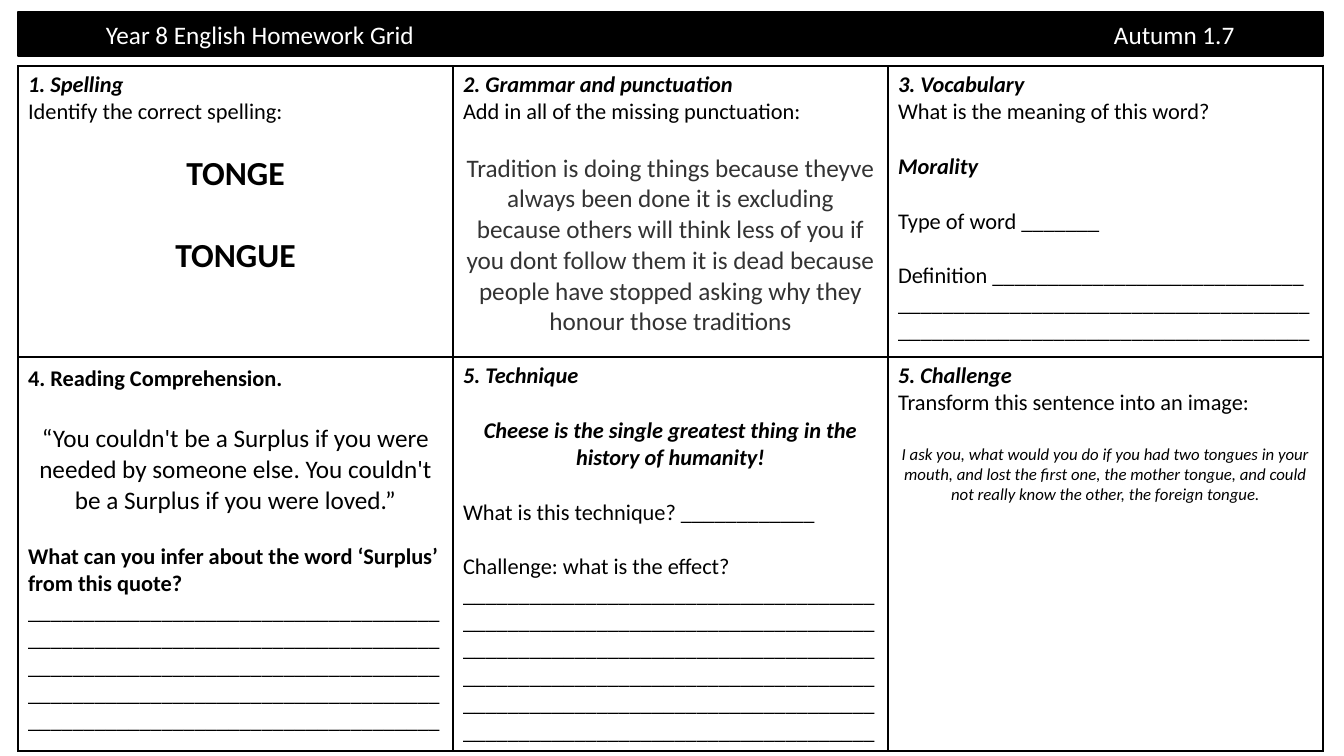
"""Build a one-slide English homework grid with a title bar and six task cells."""
from dataclasses import dataclass

import lxml.etree
import pptx
import pptx.dml.color
import pptx.enum.text
import pptx.oxml.ns
import pptx.util

EMU_PER_PX = 914400 / 100.8
LINE_HEIGHT = 1.22
RULE = "_" * 37
ALIGN = pptx.enum.text.PP_ALIGN


@dataclass(frozen=True)
class Theme:
    font: str = "Calibri"
    black: str = "000000"
    white: str = "FFFFFF"
    grey: str = "333333"
    small: int = 12
    body: int = 16
    large: int = 18
    word: int = 24
    border: int = 1


THEME = Theme()


@dataclass(frozen=True)
class Line:
    text: str
    size: int = THEME.body
    bold: bool = False
    italic: bool = False
    centred: bool = False
    gap: int = 0
    color: str = THEME.black
    height: int = 0


def heading(text: str) -> Line:
    return Line(text, bold=True, italic=True)


def spaced(text: str) -> Line:
    return Line(text, gap=THEME.body)


GRID: list[list[list[Line]]] = [
    [
        [
            heading("1. Spelling"),
            Line("Identify the correct spelling:"),
            Line("TONGE", THEME.word, bold=True, centred=True, gap=THEME.body),
            Line("TONGUE", THEME.word, bold=True, centred=True, gap=THEME.word),
        ],
        [
            heading("2. Grammar and punctuation"),
            Line("Add in all of the missing punctuation:"),
            Line("Tradition is doing things because theyve always been done it is "
                 "excluding because others will think less of you if you dont follow "
                 "them it is dead because people have stopped asking why they honour "
                 "those traditions",
                 THEME.large, centred=True, gap=THEME.body, color=THEME.grey),
        ],
        [
            heading("3. Vocabulary"),
            Line("What is the meaning of this word?"),
            Line("Morality", bold=True, italic=True, gap=THEME.body),
            spaced("Type of word _______"),
            spaced("Definition " + "_" * 28 + " " + RULE * 2),
        ],
    ],
    [
        [
            Line("4. Reading Comprehension.", bold=True, height=22),
            Line("“You couldn't be a Surplus if you were needed by someone else. "
                 "You couldn't be a Surplus if you were loved.”",
                 THEME.large, centred=True, gap=THEME.large),
            Line("What can you infer about the word ‘Surplus’ from this quote?",
                 bold=True, gap=THEME.body),
            Line(RULE * 5),
        ],
        [
            heading("5. Technique"),
            Line("Cheese is the single greatest thing in the history of humanity!",
                 bold=True, italic=True, centred=True, gap=THEME.body),
            spaced("What is this technique? ____________"),
            spaced("Challenge: what is the effect? " + RULE * 6),
        ],
        [
            heading("5. Challenge"),
            Line("Transform this sentence into an image:"),
            Line("I ask you, what would you do if you had two tongues in your mouth, "
                 "and lost the first one, the mother tongue, and could not really know "
                 "the other, the foreign tongue.",
                 THEME.small, italic=True, centred=True, gap=THEME.body),
        ],
    ],
]
ROW_HEIGHTS = (291, 394)
COLUMN_WIDTH = 435


def px(length: int) -> pptx.util.Emu:
    return pptx.util.Emu(round(length * EMU_PER_PX))


def rgb(color: str) -> pptx.dml.color.RGBColor:
    return pptx.dml.color.RGBColor.from_string(color)


def write_line(p, line: Line) -> None:
    p.text = line.text
    p.alignment = ALIGN.CENTER if line.centred else ALIGN.LEFT
    p.space_before = pptx.util.Pt(round(line.gap * LINE_HEIGHT, 1))
    if line.height:
        p.line_spacing = pptx.util.Pt(line.height)
    p.font.name = THEME.font
    p.font.size = pptx.util.Pt(line.size)
    p.font.bold = line.bold
    p.font.italic = line.italic
    p.font.color.rgb = rgb(line.color)


def add_tab_stop(p, position: int) -> None:
    qn = pptx.oxml.ns.qn
    tabs = lxml.etree.Element(qn("a:tabLst"))
    lxml.etree.SubElement(tabs, qn("a:tab"), pos=str(px(position)), algn="l")
    p.font._element.addprevious(tabs)


def add_borders(cell) -> None:
    qn = pptx.oxml.ns.qn
    tc_pr = cell._tc.get_or_add_tcPr()
    for i, side in enumerate(("a:lnL", "a:lnR", "a:lnT", "a:lnB")):
        ln = lxml.etree.Element(qn(side), w=str(pptx.util.Pt(THEME.border)))
        fill = lxml.etree.SubElement(ln, qn("a:solidFill"))
        lxml.etree.SubElement(fill, qn("a:srgbClr"), val=THEME.black)
        tc_pr.insert(i, ln)


def draw_title(s) -> None:
    sp = s.shapes.title
    sp.left, sp.top, sp.width, sp.height = px(18), px(12), px(1305), px(44)
    sp.fill.solid()
    sp.fill.fore_color.rgb = rgb(THEME.black)
    sp.line.color.rgb = rgb(THEME.black)
    sp.line.width = pptx.util.Pt(THEME.border)
    tf = sp.text_frame
    tf.auto_size = pptx.enum.text.MSO_AUTO_SIZE.NONE
    tf.vertical_anchor = pptx.enum.text.MSO_ANCHOR.MIDDLE
    tf.margin_left = px(88)
    tf.margin_top = tf.margin_bottom = 0
    p = tf.paragraphs[0]
    write_line(p, Line("Year 8 English Homework Grid\tAutumn 1.7", THEME.large,
                       color=THEME.white))
    add_tab_stop(p, 1008)


def draw_grid(s) -> None:
    columns = len(GRID[0])
    table = s.shapes.add_table(len(GRID), columns, px(18), px(66),
                               px(COLUMN_WIDTH * columns), px(sum(ROW_HEIGHTS))).table
    table.first_row = table.horz_banding = False
    for column in table.columns:
        column.width = px(COLUMN_WIDTH)
    for i, (row, height) in enumerate(zip(GRID, ROW_HEIGHTS)):
        table.rows[i].height = px(height)
        for j, lines in enumerate(row):
            cell = table.cell(i, j)
            cell.fill.solid()
            cell.fill.fore_color.rgb = rgb(THEME.white)
            add_borders(cell)
            tf = cell.text_frame
            for k, line in enumerate(lines):
                write_line(tf.add_paragraph() if k else tf.paragraphs[0], line)


def main() -> None:
    prs = pptx.Presentation()
    prs.slide_width, prs.slide_height = px(1344), px(756)
    s = prs.slides.add_slide(prs.slide_layouts[5])
    draw_title(s)
    draw_grid(s)
    prs.save("out.pptx")


if __name__ == "__main__":
    main()
